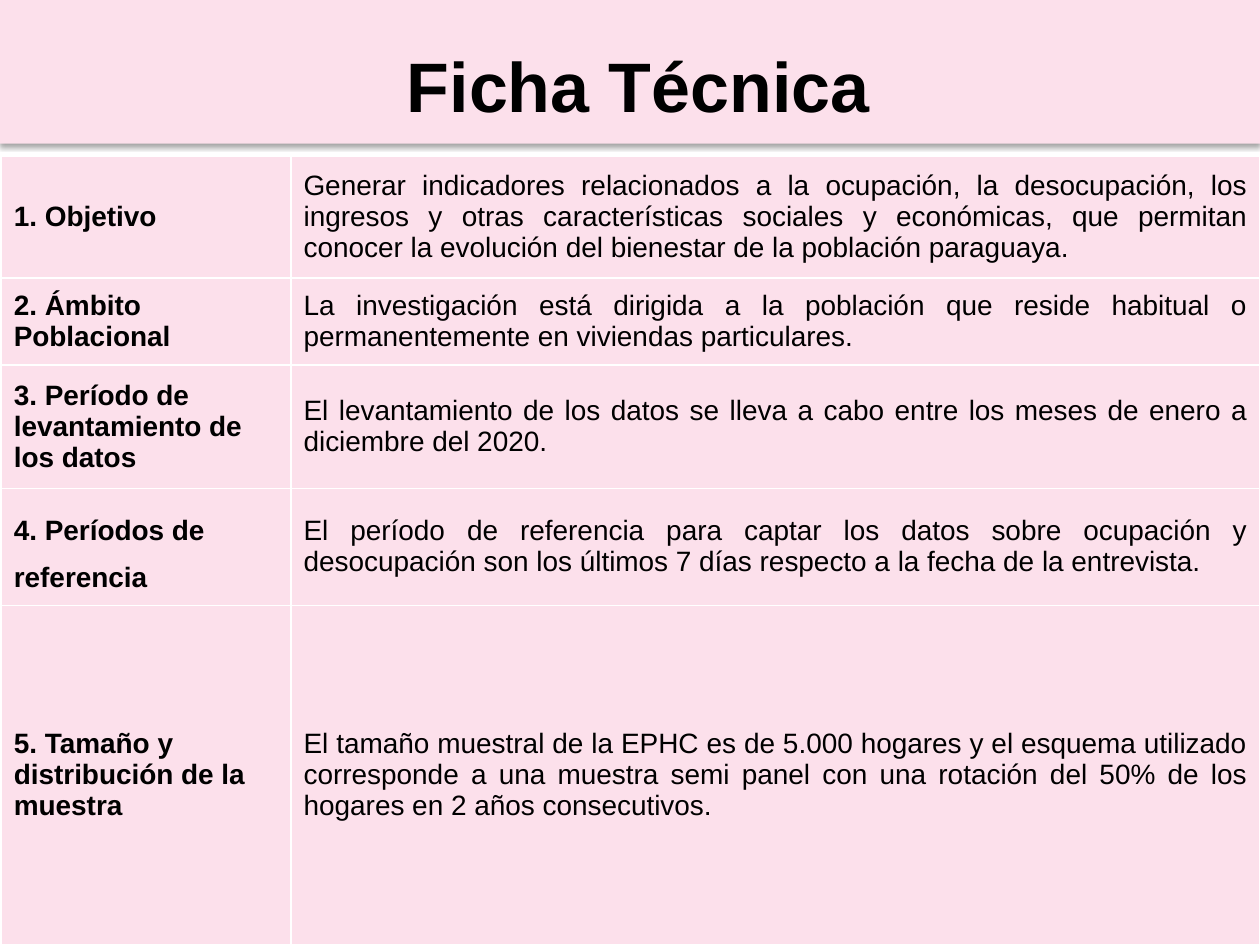
from lxml import etree
from pptx import Presentation
from pptx import util as u
from pptx.dml.color import RGBColor
from pptx.enum import shapes, text
from pptx.oxml.ns import qn

WIDE, HIGH = u.Inches(10), u.Inches(7.5)
PINK, WHITE, BLACK = "FCE0EB", "FFFFFF", "000000"
COLS = (2.3, 7.69)
ROWS = (0.98, 0.69, 0.98, 0.93, 2.7)
FACTS = (
    ("1. Objetivo",
     "Generar indicadores relacionados a la ocupación, la desocupación, los ingresos y otras "
     "características sociales y económicas, que permitan conocer la evolución del bienestar "
     "de la población paraguaya. "),
    ("2. Ámbito Poblacional",
     "La investigación está dirigida a la población que reside habitual o permanentemente "
     "en viviendas particulares."),
    ("3. Período de levantamiento de los datos",
     "El levantamiento de los datos se lleva a cabo entre los meses de enero a diciembre del 2020."),
    ("4. Períodos de referencia",
     "El período de referencia para captar los datos sobre ocupación y desocupación son los "
     "últimos 7 días respecto a la fecha de la entrevista."),
    ("5. Tamaño y distribución de la muestra",
     "El tamaño muestral de la EPHC es de 5.000 hogares y el esquema utilizado corresponde a "
     "una muestra semi panel con una rotación del 50% de los hogares en 2 años consecutivos."),
)


def paint(fill, color):
    fill.solid()
    fill.fore_color.rgb = RGBColor.from_string(color)


def style(para, size, bold, align):
    para.alignment = align
    for run in para.runs:
        font = run.font
        font.name, font.size, font.bold = "Arial", u.Pt(size), bold
        paint(font.fill, BLACK)


def add_shade(shape):
    """Give the shape a soft shadow straight below it."""
    shape.shadow.inherit = False
    effects = shape.element.spPr.find(qn("a:effectLst"))
    shade = etree.SubElement(effects, qn("a:outerShdw"), blurRad=str(u.Pt(3.1)),
                             dist=str(u.Pt(1.6)), dir="5400000", rotWithShape="0")
    tint = etree.SubElement(shade, qn("a:srgbClr"), val=BLACK)
    etree.SubElement(tint, qn("a:alpha"), val="38000")


def add_edges(cell, top):
    props = cell._tc.get_or_add_tcPr()
    for side, width in (("L", 1), ("R", 1), ("T", top), ("B", 1)):
        line = etree.SubElement(props, qn("a:ln" + side), w=str(u.Pt(width)))
        fill = etree.SubElement(line, qn("a:solidFill"))
        etree.SubElement(fill, qn("a:srgbClr"), val=WHITE)


def add_header(slide, x, y, w, h):
    band = slide.shapes.add_shape(shapes.MSO_SHAPE.RECTANGLE, x, y, w, h)
    paint(band.fill, PINK)
    band.line.fill.background()
    add_shade(band)
    title = slide.shapes.title
    title.element.addprevious(band.element)
    title.left, title.top = x + int(w * 0.042), y + int(h * 0.254)
    title.width, title.height = int(w * 0.929), int(h * 0.675)
    frame = title.text_frame
    frame.text = "Ficha Técnica"
    frame.vertical_anchor = text.MSO_ANCHOR.MIDDLE
    frame.auto_size = text.MSO_AUTO_SIZE.SHAPE_TO_FIT_TEXT
    style(frame.paragraphs[0], 40, True, text.PP_ALIGN.CENTER)


def add_facts(slide, x, y, w, h):
    table = slide.shapes.add_table(len(ROWS), len(COLS), x, y, w, h).table
    table.first_row = table.horz_banding = False
    for col, part in zip(table.columns, COLS):
        col.width = int(w * part / sum(COLS))
    for row, part in zip(table.rows, ROWS):
        row.height = int(h * part / sum(ROWS))
    for r, fact in enumerate(FACTS):
        for c, words in enumerate(fact):
            cell = table.cell(r, c)
            add_edges(cell, 1 if r else 3)
            paint(cell.fill, PINK)
            cell.vertical_anchor = text.MSO_ANCHOR.MIDDLE
            cell.text_frame.text = words
            align = text.PP_ALIGN.JUSTIFY if c else text.PP_ALIGN.LEFT
            style(cell.text_frame.paragraphs[0], 16, c == 0, align)
    table.cell(3, 0).text_frame.paragraphs[0].line_spacing = 1.5


def main():
    deck = Presentation()
    deck.slide_width, deck.slide_height = WIDE, HIGH
    slide = deck.slides.add_slide(deck.slide_layouts[5])
    add_header(slide, 0, 0, WIDE, int(HIGH * 0.152))
    left, top = int(WIDE * 0.001), int(HIGH * 0.164)
    add_facts(slide, left, top, WIDE - left, HIGH - top)
    deck.save("out.pptx")


if __name__ == "__main__":
    main()
